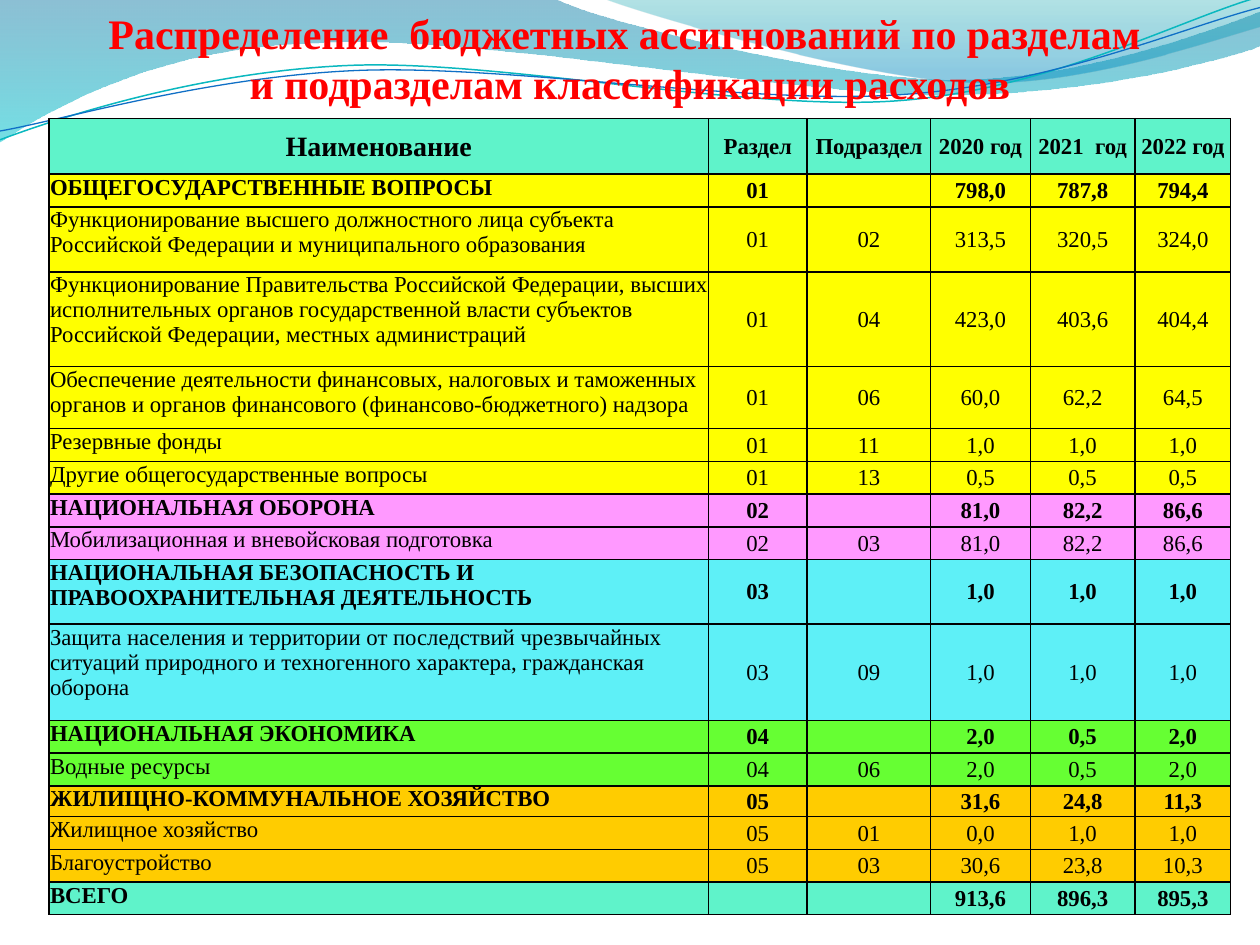
"""Build the slide with the budget table by section and subsection."""
import pptx
import pptx.dml.color
import pptx.enum.text
import pptx.oxml
import pptx.oxml.ns
import pptx.util

Cm = pptx.util.Cm
Pt = pptx.util.Pt
RGBColor = pptx.dml.color.RGBColor
ALIGN = pptx.enum.text.PP_ALIGN
ANCHOR = pptx.enum.text.MSO_ANCHOR
NS = pptx.oxml.ns.nsdecls("a")
qn = pptx.oxml.ns.qn

FONT = "Times New Roman"
BLACK = RGBColor(0, 0, 0)
RED = RGBColor(0xFF, 0, 0)
MINT = RGBColor(0x5F, 0xF3, 0xCA)
YELLOW = RGBColor(0xFF, 0xFF, 0)
PINK = RGBColor(0xFF, 0x99, 0xFF)
CYAN = RGBColor(0x5E, 0xF0, 0xF7)
GREEN = RGBColor(0x66, 0xFF, 0x33)
GOLD = RGBColor(0xFF, 0xCC, 0)
TEAL = RGBColor(0x0A, 0xB8, 0xBF)
BLUE = RGBColor(0x0F, 0x6F, 0xC6)
DEEP = RGBColor(0, 0x74, 0xA1)
AQUA = RGBColor(0, 0xC6, 0xCF)
SEA = RGBColor(0, 0xA1, 0xA9)
SKY = RGBColor(0, 0x8B, 0xBF)


def write(frame, text, size=13, bold=False, color=BLACK, align=ALIGN.CENTER):
    para = frame.paragraphs[0]
    para.alignment = align
    if not text:
        para._p.append(pptx.oxml.parse_xml(f'<a:endParaRPr {NS} sz="{size * 100}"/>'))
    para.text = text
    for run in para.runs:
        run.font.name = FONT
        run.font.size = Pt(size)
        run.font.bold = bold
        run.font.color.rgb = color


def draw(shapes, start, parts, close):
    flat = [value * Cm(2.54) for part in (start, *parts) for value in part]
    points = list(zip(flat[::2], flat[1::2]))
    pen = shapes.build_freeform(*points[0])
    pen.add_line_segments(points[1:], close=close)
    shape = pen.convert_to_shape()
    shape.shadow.inherit = False
    lines = iter(list(shape._element.iter(qn("a:lnTo"))))
    for part in parts:
        line = next(lines)
        if len(part) == 6:
            bend = pptx.oxml.parse_xml(f"<a:cubicBezTo {NS}/>")
            line.addprevious(bend)
            for piece in (line, next(lines), next(lines)):
                bend.append(piece[0])
                piece.getparent().remove(piece)
    return shape


deck = pptx.Presentation()
deck.slide_width = Cm(25.4)
deck.slide_height = Cm(19.05)
slide = deck.slides.add_slide(deck.slide_layouts[6])
shapes = slide.shapes

waves = [
    ((0, 0), [(4.4, -0.01), (4.76, 0.17, 6.64, 0.63, 7.58, 0.63),
              (8.53, 0.63, 9.58, 0.26, 10, 0.09), (10.01, 0.36),
              (9.83, 0.44, 8.7, 0.76, 7.46, 0.75),
              (6.22, 0.75, 3.82, 0.28, 2.57, 0.34),
              (1.29, 0.36, 0.46, 0.83, -0.01, 1.13)],
     [(0, DEEP, 45), (1, AQUA, 55)]),
    ((4.79, -0.01), [(5.09, 0.11, 6.82, 0.62, 7.69, 0.65),
                     (8.56, 0.69, 9.61, 0.32, 10, 0.21), (10, 0)],
     [(0, SEA, 30), (0.8, SKY, 45)]),
]
for start, parts, stops in waves:
    wave = draw(shapes, start, parts, True)
    wave.line.fill.background()
    wave.fill.gradient()
    wave.fill.gradient_angle = 270
    for stop, (place, color, alpha) in zip(wave.fill.gradient_stops, stops):
        stop.position = place
        stop.color.rgb = color
        tone = stop.color._xFill.find(qn("a:srgbClr"))
        tone.append(pptx.oxml.parse_xml(f'<a:alpha {NS} val="{alpha * 1000}"/>'))

curves = [
    ((0, 1.11), [(0.48, 0.93, 1.58, 0.57, 2.77, 0.52),
                 (3.95, 0.47, 5.93, 0.89, 7.13, 0.8),
                 (8.33, 0.71, 9.38, 0.15, 9.98, -0.02)], TEAL, 0.85),
    ((0, 1.04), [(0.47, 0.96, 1.64, 0.61, 2.83, 0.56),
                 (4.03, 0.51, 5.97, 0.84, 7.17, 0.75),
                 (8.36, 0.67, 9.41, 0.21, 10, 0.06)], BLUE, 0.75),
]
for start, parts, color, width in curves:
    curve = draw(shapes, start, parts, False)
    curve.fill.background()
    curve.line.color.rgb = color
    curve.line.width = Pt(width)

title = shapes.add_textbox(Cm(1.27), 0, Cm(22.86), Cm(2.18)).text_frame
title.word_wrap = True
title.vertical_anchor = ANCHOR.BOTTOM
title.margin_left = title.margin_right = title.margin_bottom = 0
write(title, "Распределение  бюджетных ассигнований по разделам \v"
      "и подразделам классификации расходов", size=24, bold=True, color=RED)

rows = [
    (MINT, 1.12, "Наименование", "Раздел", "Подраздел", "2020 год", "2021  год", "2022 год"),
    (YELLOW, 0.66, "ОБЩЕГОСУДАРСТВЕННЫЕ ВОПРОСЫ", "01", "", "798,0", "787,8", "794,4"),
    (YELLOW, 1.31, "Функционирование высшего должностного лица субъекта Российской "
     "Федерации и муниципального образования", "01", "02", "313,5", "320,5", "324,0"),
    (YELLOW, 1.91, "Функционирование Правительства Российской Федерации, высших "
     "исполнительных органов государственной власти субъектов Российской Федерации, "
     "местных администраций", "01", "04", "423,0", "403,6", "404,4"),
    (YELLOW, 1.25, "Обеспечение деятельности финансовых, налоговых и таможенных органов "
     "и органов финансового (финансово-бюджетного) надзора",
     "01", "06", "60,0", "62,2", "64,5"),
    (YELLOW, 0.66, "Резервные фонды", "01", "11", "1,0", "1,0", "1,0"),
    (YELLOW, 0.66, "Другие общегосударственные вопросы", "01", "13", "0,5", "0,5", "0,5"),
    (PINK, 0.66, "НАЦИОНАЛЬНАЯ ОБОРОНА", "02", "", "81,0", "82,2", "86,6"),
    (PINK, 0.66, "Мобилизационная и вневойсковая подготовка",
     "02", "03", "81,0", "82,2", "86,6"),
    (CYAN, 1.3, "НАЦИОНАЛЬНАЯ БЕЗОПАСНОСТЬ И ПРАВООХРАНИТЕЛЬНАЯ ДЕЯТЕЛЬНОСТЬ",
     "03", "", "1,0", "1,0", "1,0"),
    (CYAN, 1.94, "Защита населения и территории от последствий чрезвычайных ситуаций "
     "природного и техногенного характера, гражданская оборона",
     "03", "09", "1,0", "1,0", "1,0"),
    (GREEN, 0.66, "НАЦИОНАЛЬНАЯ ЭКОНОМИКА", "04", "", "2,0", "0,5", "2,0"),
    (GREEN, 0.66, "Водные ресурсы", "04", "06", "2,0", "0,5", "2,0"),
    (GOLD, 0.62, "ЖИЛИЩНО-КОММУНАЛЬНОЕ ХОЗЯЙСТВО", "05", "", "31,6", "24,8", "11,3"),
    (GOLD, 0.66, "Жилищное хозяйство", "05", "01", "0,0", "1,0", "1,0"),
    (GOLD, 0.66, "Благоустройство", "05", "03", "30,6", "23,8", "10,3"),
    (MINT, 0.66, "ВСЕГО", "", "", "913,6", "896,3", "895,3"),
]
widths = [13.29, 1.99, 2.49, 2.01, 2.11, 1.93]
table = shapes.add_table(len(rows), len(widths), Cm(0.99), Cm(2.39),
                         Cm(sum(widths)), Cm(sum(row[1] for row in rows))).table
for column, width in zip(table.columns, widths):
    column.width = Cm(width)
for i, (fill, height, *texts) in enumerate(rows):
    table.rows[i].height = Cm(height)
    head = i == 0
    for j, text in enumerate(texts):
        cell = table.cell(i, j)
        name = j == 0 and not head
        cell.margin_left = cell.margin_right = cell.margin_top = Cm(0.02)
        cell.margin_bottom = 0
        cell.vertical_anchor = ANCHOR.TOP if name else ANCHOR.MIDDLE
        for side in "LRTB":
            cell._tc.get_or_add_tcPr().append(pptx.oxml.parse_xml(
                f'<a:ln{side} {NS} w="12700"><a:solidFill><a:srgbClr val="{BLACK}"/>'
                f'</a:solidFill></a:ln{side}>'))
        cell.fill.solid()
        cell.fill.fore_color.rgb = fill
        write(cell.text_frame, text, size=16 if head and j == 0 else 13,
              bold=head or not texts[2], align=ALIGN.LEFT if name else ALIGN.CENTER)

deck.save("out.pptx")
